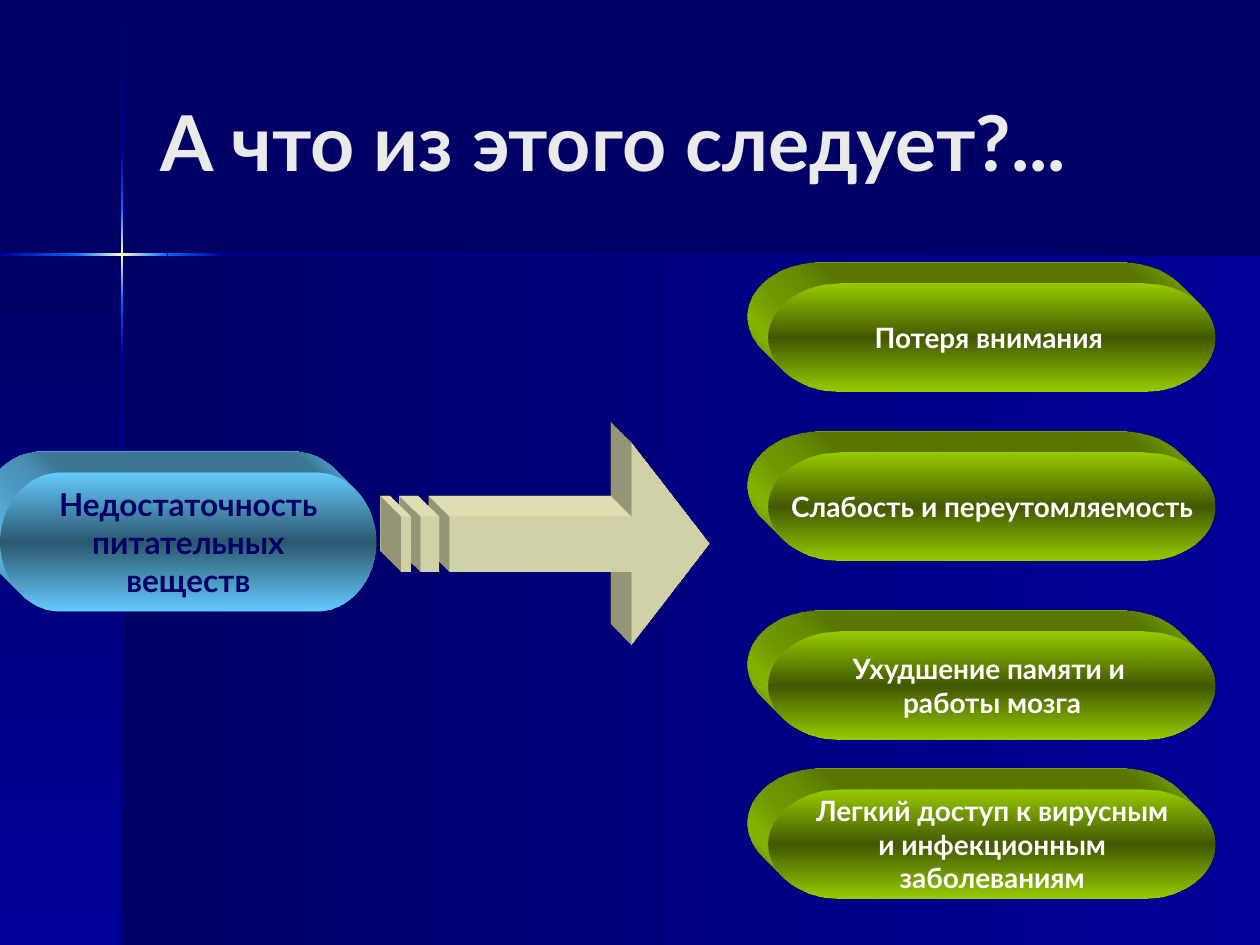
from dataclasses import dataclass

from lxml import etree
from pptx import Presentation
from pptx.dml.color import RGBColor
from pptx.enum.shapes import MSO_SHAPE as Shape
from pptx.enum.text import MSO_ANCHOR as Anchor, PP_ALIGN as Align
from pptx.oxml import parse_xml
from pptx.oxml.ns import nsdecls, qn
from pptx.util import Inches, Pt


@dataclass(frozen=True)
class Theme:
    font: str = "Lato"
    navy: str = "000066"
    blue: str = "000099"
    ray: str = "0066FF"
    cream: str = "FFFFCC"
    title: str = "EAEAEA"
    white: str = "FFFFFF"
    cause: tuple = ("66CCFF", "2D5A70", "66CCFF")
    effect: tuple = ("99CC00", "435A00", "99CC00")
    title_size: int = 44
    cause_size: int = 18
    effect_size: int = 16


T = Theme()
ACROSS, DOWN = 0, 90


def gradient(sp, colors, angle):
    step = 100000 // (len(colors) - 1)
    stops = "".join(
        f'<a:gs pos="{i * step}"><a:srgbClr val="{c}"/></a:gs>'
        for i, c in enumerate(colors)
    )
    sp.fill.background()
    old = sp._element.spPr.find(qn("a:noFill"))
    old.getparent().replace(old, parse_xml(
        f'<a:gradFill {nsdecls("a")} rotWithShape="1"><a:gsLst>{stops}</a:gsLst>'
        f'<a:lin ang="{angle * 60000}" scaled="1"/></a:gradFill>'))


def plain(sp):
    sp.line.fill.background()
    sp.shadow.inherit = False


def extrude(sp, color, light):
    spPr = sp._element.spPr
    scene = etree.SubElement(spPr, qn("a:scene3d"))
    etree.SubElement(scene, qn("a:camera"), prst="legacyObliqueTopLeft")
    etree.SubElement(scene, qn("a:lightRig"), rig="legacyFlat3", dir=light)
    solid = etree.SubElement(spPr, qn("a:sp3d"), extrusionH="430200",
                             prstMaterial="legacyMatte")
    tint = etree.SubElement(solid, qn("a:extrusionClr"))
    etree.SubElement(tint, qn("a:srgbClr"), val=color)


def write(tf, text, size, color, align):
    tf.text = text
    tf.vertical_anchor = Anchor.MIDDLE
    for p in tf.paragraphs:
        p.alignment = align
        for r in p.runs:
            r.font.name, r.font.size, r.font.bold = T.font, Pt(size), True
            r.font.color.rgb = RGBColor.from_string(color)


def add_panel(s, box, colors, angle):
    sp = s.shapes.add_shape(Shape.RECTANGLE, *map(Inches, box))
    plain(sp)
    gradient(sp, colors, angle)


def add_backdrop(s, x, y, width, height):
    s.background.fill.solid()
    s.background.fill.fore_color.rgb = RGBColor.from_string(T.navy)
    night, dawn = (T.navy, T.blue), (T.blue, T.navy)
    glow, fade = (T.blue, T.ray), (T.ray, T.blue)
    spark = (T.ray, T.cream, T.ray)
    add_panel(s, (x, y, width - x, height - y), night, ACROSS)
    add_panel(s, (0, y, x, height - y), night, DOWN)
    beams = [
        (DOWN, 0.01, 1.21, night), (DOWN, 2.82, height, dawn),
        (ACROSS, 1.77, width, dawn), (DOWN, 2.38, 2.82, fade),
        (DOWN, 1.21, 1.65, glow), (DOWN, 1.65, 2.38, spark),
        (ACROSS, 0, 0.61, glow), (ACROSS, 1.33, 1.77, fade),
        (ACROSS, 0.6, 1.33, spark),
    ]
    for angle, start, end, colors in beams:
        if angle == DOWN:
            box = (x - 0.01, start, 0.02, end - start)
        else:
            box = (start, y - 0.01, end - start, 0.02)
        add_panel(s, box, colors, angle)


def add_pill(s, box, text, colors, size, color):
    sp = s.shapes.add_shape(Shape.FLOWCHART_TERMINATOR, *map(Inches, box))
    plain(sp)
    gradient(sp, colors, DOWN)
    extrude(sp, colors[0], "b")
    write(sp.text_frame, text, size, color, Align.CENTER)
    sp.text_frame.word_wrap = False


def add_effects(s, left, width, height):
    effects = [
        (2.25, "Потеря внимания "),
        (3.59, "Слабость и переутомляемость"),
        (5.01, "Ухудшение памяти и \nработы мозга"),
        (6.27, "Легкий доступ к вирусным\nи инфекционным\nзаболеваниям"),
    ]
    for top, text in effects:
        add_pill(s, (left, top, width, height), text, T.effect,
                 T.effect_size, T.white)


def add_striped_arrow(s, left, top, width, height):
    upper, lower = top + 0.59, top + 1.03
    neck, tip, bottom = left + 1.82, left + width, top + height
    outlines = [[
        (neck, top), (neck, upper), (left + 0.38, upper), (left + 0.38, lower),
        (neck, lower), (neck, bottom), (tip, top + height / 2),
    ]]
    for start, end in ((0.15, 0.3), (0, 0.08)):
        x1, x2 = left + start, left + end
        outlines.append([(x1, upper), (x1, lower), (x2, lower), (x2, upper)])
    outlines = [[(Inches(x), Inches(y)) for x, y in points] for points in outlines]
    builder = s.shapes.build_freeform(*outlines[0][0])
    for i, points in enumerate(outlines):
        if i:
            builder.move_to(*points[0])
        builder.add_line_segments(points[1:], close=True)
    sp = builder.convert_to_shape()
    plain(sp)
    sp.fill.solid()
    sp.fill.fore_color.rgb = RGBColor.from_string(T.cream)
    extrude(sp, T.cream, "l")


def add_title(s, box, text):
    sp = s.shapes.title
    sp.left, sp.top, sp.width, sp.height = map(Inches, box)
    write(sp.text_frame, text, T.title_size, T.title, Align.LEFT)
    s.shapes._spTree.append(sp._element)


def main():
    prs = Presentation()
    prs.slide_width, prs.slide_height = Inches(10), Inches(7.5)
    s = prs.slides.add_slide(prs.slide_layouts[5])
    add_backdrop(s, 0.97, 2.02, 10, 7.5)
    add_pill(s, (0, 3.75, 2.99, 1.1), "Недостаточность\nпитательных\nвеществ",
             T.cause, T.cause_size, T.navy)
    add_effects(s, 6.1, 3.55, 0.86)
    add_striped_arrow(s, 3.19, 3.51, 2.44, 1.61)
    add_title(s, (1.17, 0.33, 8.25, 1.57), "А что из этого следует?...")
    prs.save("out.pptx")


if __name__ == "__main__":
    main()
